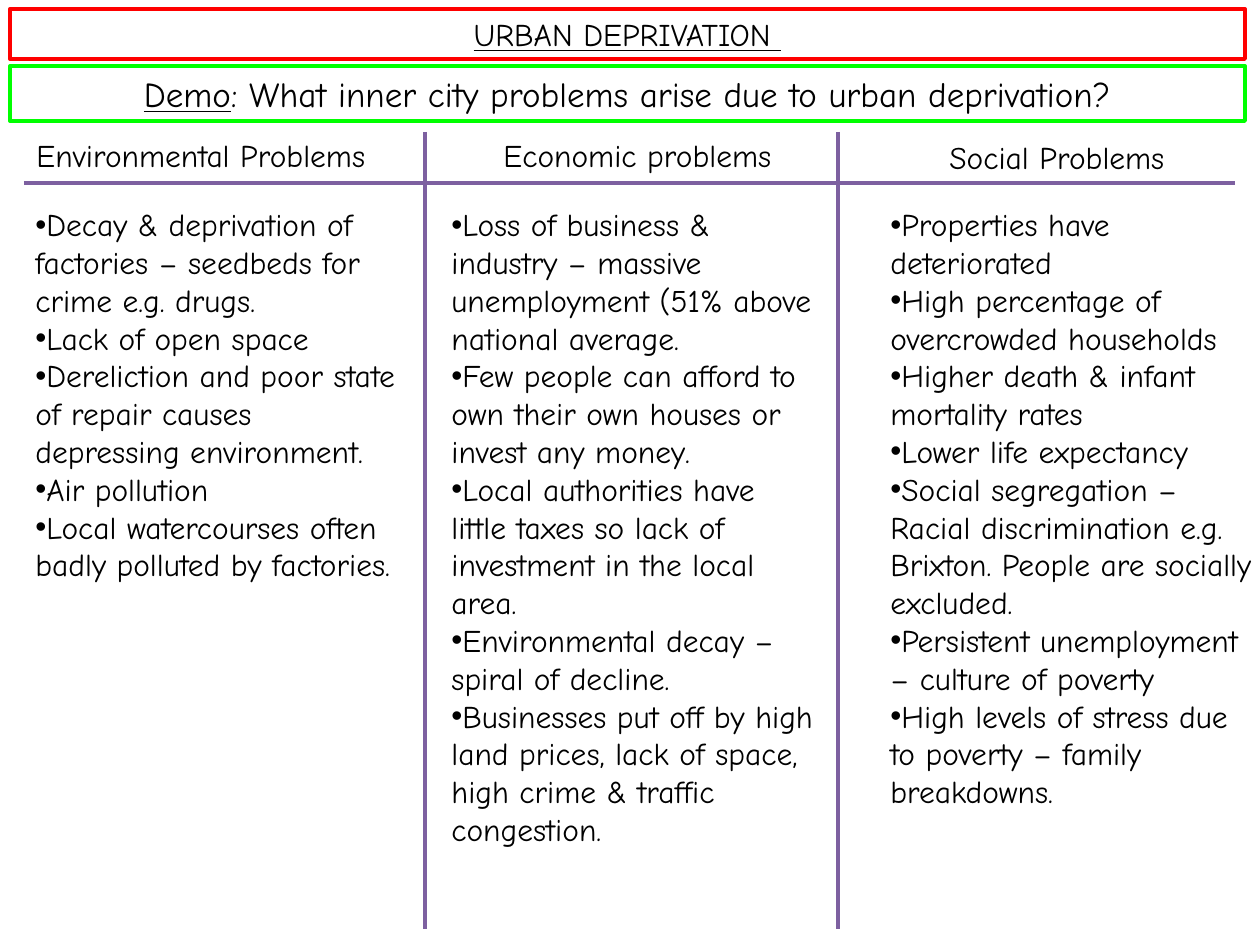
from dataclasses import dataclass

from lxml.etree import SubElement
from pptx import Presentation
from pptx.dml.color import RGBColor
from pptx.enum.shapes import MSO_CONNECTOR, MSO_SHAPE
from pptx.enum.text import MSO_ANCHOR, MSO_AUTO_SIZE, PP_ALIGN
from pptx.oxml.ns import qn
from pptx.util import Emu, Pt

PIXELS_PER_INCH = 126


@dataclass(frozen=True)
class Theme:
    font: str = "Comic Neue"
    ink: str = "000000"
    title_frame: str = "FF0000"
    question_frame: str = "00FF00"
    divider: str = "7D60A0"
    body_size: int = 18
    question_size: int = 20
    line_width: float = 2.25


def px(*lengths):
    return [Emu(round(length * 914400 / PIXELS_PER_INCH)) for length in lengths]


class SlideBuilder:
    def __init__(self, slide, theme):
        self.shapes = slide.shapes
        self.theme = theme

    def add_span(self, para, text, size, underline=False):
        span = para.add_run()
        span.text = text
        span.font.name = self.theme.font
        span.font.size = Pt(size)
        span.font.underline = underline
        span.font.color.rgb = RGBColor.from_string(self.theme.ink)

    def stroke(self, line, color):
        line.color.rgb = RGBColor.from_string(color)
        line.width = Pt(self.theme.line_width)

    def banner(self, top, height, color, size, spans):
        box = self.shapes.add_shape(MSO_SHAPE.RECTANGLE, *px(10, top, 1235, height))
        box.shadow.inherit = False
        box.fill.background()
        self.stroke(box.line, color)
        frame = box.text_frame
        frame.word_wrap = True
        frame.auto_size = MSO_AUTO_SIZE.SHAPE_TO_FIT_TEXT
        frame.vertical_anchor = MSO_ANCHOR.TOP
        para = frame.paragraphs[0]
        para.alignment = PP_ALIGN.CENTER
        for text, underline in spans:
            self.add_span(para, text, size, underline)

    def text_box(self, left, top, width, height, wrap):
        box = self.shapes.add_textbox(*px(left, top, width, height))
        frame = box.text_frame
        frame.word_wrap = wrap
        frame.auto_size = MSO_AUTO_SIZE.SHAPE_TO_FIT_TEXT
        return frame

    def heading(self, left, top, width, text):
        frame = self.text_box(left, top, width, 50, False)
        self.add_span(frame.paragraphs[0], text, self.theme.body_size)

    def bullets(self, left, width, height, items):
        frame = self.text_box(left, 199, width, height, True)
        for index, item in enumerate(items):
            para = frame.add_paragraph() if index else frame.paragraphs[0]
            properties = para._p.get_or_add_pPr()
            SubElement(properties, qn("a:buFont"), typeface="Arial")
            SubElement(properties, qn("a:buChar"), char="•")
            self.add_span(para, item, self.theme.body_size)

    def divider(self, *ends):
        line = self.shapes.add_connector(MSO_CONNECTOR.STRAIGHT, *px(*ends))
        self.stroke(line.line, self.theme.divider)
        SubElement(line._element.spPr, qn("a:effectLst"))


ENVIRONMENTAL = [
    "Decay & deprivation of factories – seedbeds for crime e.g. drugs.",
    "Lack of open space",
    "Dereliction and poor state of repair causes depressing environment.",
    "Air pollution",
    "Local watercourses often badly polluted by factories.",
]
ECONOMIC = [
    "Loss of business & industry – massive unemployment (51% above national average.",
    "Few people can afford to own their own houses or invest any money.",
    "Local authorities have little taxes so lack of investment in the local area.",
    "Environmental decay – spiral of decline.",
    "Businesses put off by high land prices, lack of space, high crime & traffic congestion.",
]
SOCIAL = [
    "Properties have deteriorated",
    "High percentage of overcrowded households",
    "Higher death & infant mortality rates",
    "Lower life expectancy",
    "Social segregation – Racial discrimination e.g. Brixton. People are socially excluded.",
    "Persistent unemployment – culture of poverty",
    "High levels of stress due to poverty – family breakdowns.",
]


def main():
    deck = Presentation()
    deck.slide_width, deck.slide_height = px(1260, 945)
    theme = Theme()
    page = SlideBuilder(deck.slides.add_slide(deck.slide_layouts[6]), theme)

    page.banner(9, 50, theme.title_frame, theme.body_size, [("URBAN DEPRIVATION ", True)])
    page.banner(66, 55, theme.question_frame, theme.question_size, [
        ("Demo", True),
        (": What inner city problems arise due to urban deprivation?", False),
    ])

    page.heading(24, 130, 386, "Environmental Problems")
    page.heading(491, 130, 315, "Economic problems")
    page.heading(937, 132, 267, "Social Problems")

    page.bullets(23, 392, 432, ENVIRONMENTAL)
    page.bullets(439, 387, 661, ECONOMIC)
    page.bullets(878, 387, 661, SOCIAL)

    page.divider(24, 183, 1235, 183)
    for column_edge in (425, 838):
        page.divider(column_edge, 132, column_edge, 929)

    deck.save("out.pptx")


if __name__ == "__main__":
    main()
